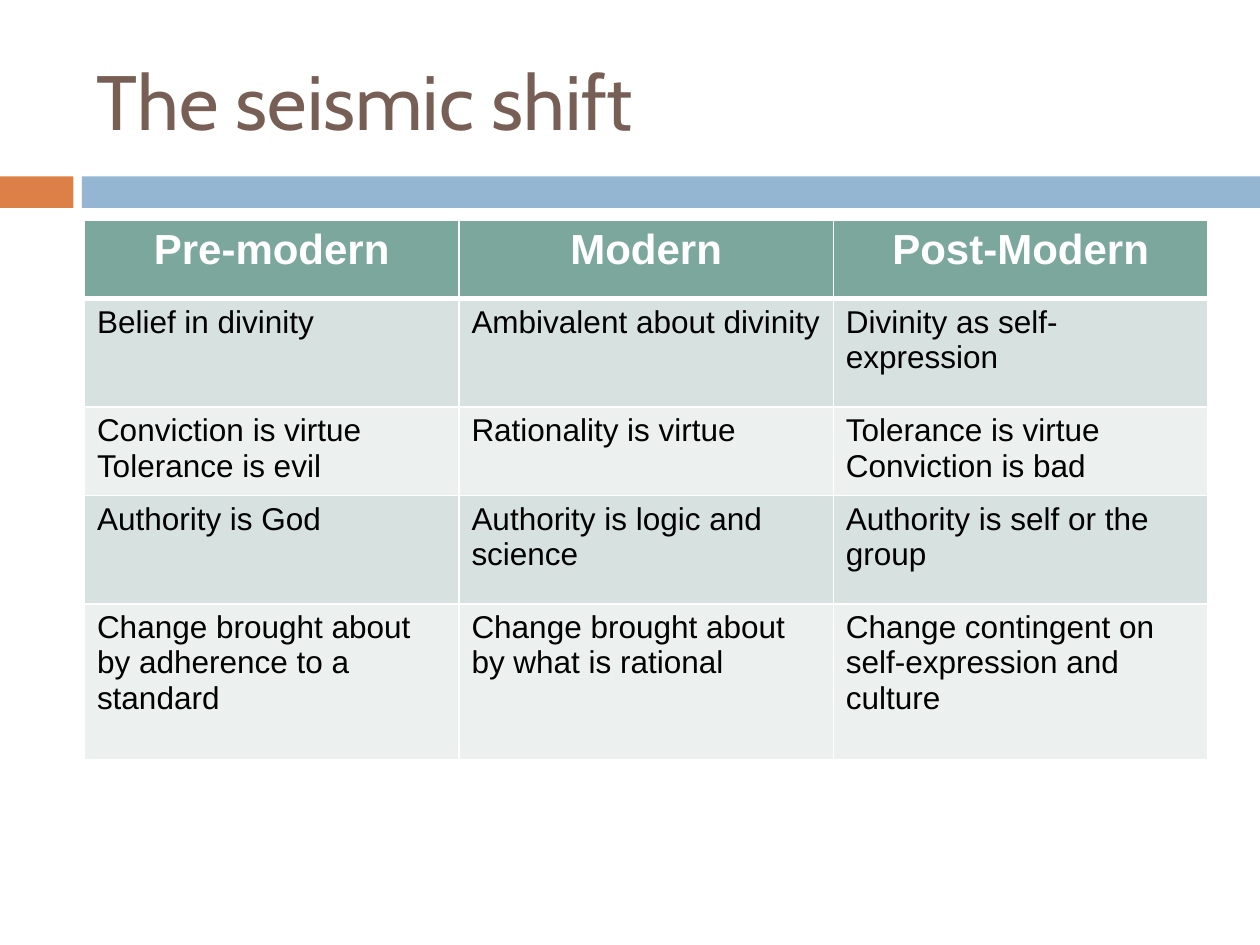
from dataclasses import dataclass

from lxml.etree import SubElement
from pptx import Presentation
from pptx.dml.color import RGBColor as RGB
from pptx.enum.shapes import MSO_SHAPE as Shape
from pptx.enum.text import MSO_ANCHOR as Anchor, PP_ALIGN as Align
from pptx.oxml.ns import qn
from pptx.util import Pt


@dataclass(frozen=True)
class Theme:
    title_font: str = "Cabin"
    body_font: str = "Arial"
    title_size: int = 44
    header_size: int = 24
    body_size: int = 18
    title: str = "775F55"
    accent: str = "DD8047"
    band: str = "94B6D2"
    header: str = "7BA79D"
    stripes: tuple = ("D7E1DF", "ECF1EF")
    text: str = "000000"
    light: str = "FFFFFF"


THEME = Theme()
HEADINGS = ["Pre-modern", "Modern", "Post-Modern"]
BELIEFS = [
    ["Belief in divinity", "Ambivalent about divinity", "Divinity as self-expression"],
    ["Conviction is virtue\nTolerance is evil", "Rationality is virtue",
     "Tolerance is virtue\nConviction is bad"],
    ["Authority is God", "Authority is logic and science", "Authority is self or the group"],
    ["Change brought about by adherence to a standard",
     "Change brought about by what is rational",
     "Change contingent on self-expression and culture"],
]
ROW_HEIGHTS = [44.6, 62, 36, 62, 89]


def style_font(paragraph, name, size, color, bold=False):
    font = paragraph.font
    font.name, font.size, font.bold = name, Pt(size), bold
    font.color.rgb = RGB.from_string(color)


def add_title(slide, left, top, width, height):
    box = slide.shapes.add_textbox(Pt(left), Pt(top), Pt(width), Pt(height))
    frame = box.text_frame
    frame.word_wrap = True
    frame.vertical_anchor = Anchor.MIDDLE
    frame.text = "The seismic shift"
    style_font(frame.paragraphs[0], THEME.title_font, THEME.title_size, THEME.title)


def add_divider(slide, left, top, width, height):
    accent_width, gap = 42, 4.8
    band_offset = accent_width + gap
    for offset, length, color in (
        (0, accent_width, THEME.accent),
        (band_offset, width - band_offset, THEME.band),
    ):
        bar = slide.shapes.add_shape(
            Shape.RECTANGLE, Pt(left + offset), Pt(top), Pt(length), Pt(height))
        bar.shadow.inherit = False
        bar.fill.solid()
        bar.fill.fore_color.rgb = RGB.from_string(color)
        bar.line.fill.background()


def set_borders(cell, widths):
    """Draw white borders; widths follow the order left, right, top, bottom."""
    properties = cell._tc.get_or_add_tcPr()
    for index, (side, width) in enumerate(zip("LRTB", widths)):
        line = properties.makeelement(qn(f"a:ln{side}"), {"w": str(Pt(width))})
        fill = SubElement(line, qn("a:solidFill"))
        SubElement(fill, qn("a:srgbClr"), val=THEME.light)
        properties.insert(index, line)


def add_belief_table(slide, left, top, width):
    rows = [HEADINGS, *BELIEFS]
    table = slide.shapes.add_table(
        len(rows), len(HEADINGS), Pt(left), Pt(top), Pt(width), Pt(sum(ROW_HEIGHTS))).table
    for column in table.columns:
        column.width = Pt(width / len(HEADINGS))
    for r, (texts, height) in enumerate(zip(rows, ROW_HEIGHTS)):
        table.rows[r].height = Pt(height)
        is_header = r == 0
        fill = THEME.header if is_header else THEME.stripes[(r - 1) % 2]
        for c, text in enumerate(texts):
            cell = table.cell(r, c)
            cell.text = text
            cell.fill.solid()
            cell.fill.fore_color.rgb = RGB.from_string(fill)
            # The rule below the header is heavier than the grid
            set_borders(cell, (1, 1, 3 if r == 1 else 1, 3 if is_header else 1))
            for paragraph in cell.text_frame.paragraphs:
                if is_header:
                    paragraph.alignment = Align.CENTER
                    style_font(paragraph, THEME.body_font, THEME.header_size, THEME.light, True)
                else:
                    style_font(paragraph, THEME.body_font, THEME.body_size, THEME.text)


def main():
    deck = Presentation()
    deck.slide_width, deck.slide_height = Pt(720), Pt(540)
    slide = deck.slides.add_slide(deck.slide_layouts[6])

    # Divider and title
    add_divider(slide, 0, 100.8, 720, 18)
    add_title(slide, 48.24, 18, 642, 78)

    # Comparison of the three eras
    add_belief_table(slide, 48.24, 126, 642)

    deck.save("out.pptx")


if __name__ == "__main__":
    main()
